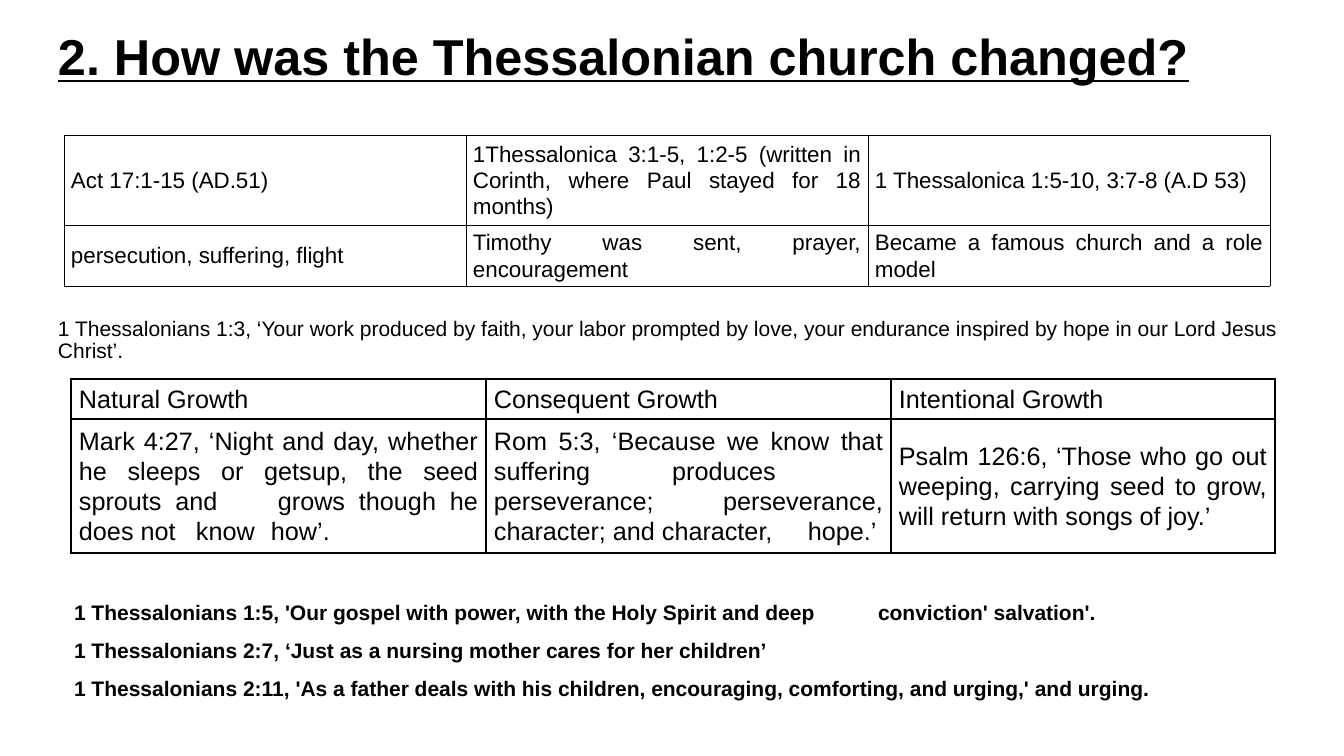
from dataclasses import dataclass

import pptx
import pptx.dml.color
import pptx.enum.text
import pptx.oxml.ns
import pptx.presentation
import pptx.slide
import pptx.util
from lxml import etree

EMU_PER_PX = 914400 / 100.8
BLACK = pptx.dml.color.RGBColor(0x00, 0x00, 0x00)
FONT = "Arial"
JUSTIFY = pptx.enum.text.PP_ALIGN.JUSTIFY
LEFT = pptx.enum.text.PP_ALIGN.LEFT


@dataclass(frozen=True)
class Style:
    size: int
    line_spacing: float
    align: pptx.enum.text.PP_ALIGN = LEFT
    space_after: int = 0
    bold: bool = False
    underline: bool = False


@dataclass(frozen=True)
class TextBox:
    left: int
    top: int
    width: int
    height: int
    style: Style
    lines: tuple[str, ...]
    tabs: tuple[int, ...] = ()


@dataclass(frozen=True)
class Cell:
    text: str
    tabs: tuple[int, ...] = ()


@dataclass(frozen=True)
class Grid:
    left: int
    top: int
    columns: tuple[int, ...]
    rows: tuple[int, ...]
    style: Style
    side_margin: int
    border: float
    cells: tuple[tuple[Cell, ...], ...]


TEXT_BOXES = (
    TextBox(58, 32, 1228, 60, Style(36, 0.9, bold=True, underline=True),
            ("2. How was the Thessalonian church changed?",)),
    TextBox(58, 318, 1228, 46, Style(15, 0.9),
            ("1 Thessalonians 1:3, ‘Your work produced by faith, your labor prompted by love, "
             "your endurance inspired by hope in our Lord Jesus Christ’.",)),
    TextBox(74, 598, 1191, 112, Style(15, 1.07, JUSTIFY, space_after=8, bold=True),
            ("1 Thessalonians 1:5, 'Our gospel with power, with the Holy Spirit and deep"
             "\tconviction' salvation'.",
             "1 Thessalonians 2:7, ‘Just as a nursing mother cares for her children’",
             "1 Thessalonians 2:11, 'As a father deals with his children, encouraging, "
             "comforting, and urging,' and urging."),
            tabs=(804,)),
)

GRIDS = (
    Grid(64, 135, (402, 402, 402), (90, 61), Style(16, 1.06, JUSTIFY), 7, 0.25, (
        (Cell("Act 17:1-15 (AD.51)"),
         Cell("1Thessalonica 3:1-5, 1:2-5 (written in Corinth, where Paul stayed for 18 months)"),
         Cell("1 Thessalonica 1:5-10, 3:7-8 (A.D 53)")),
        (Cell("persecution, suffering, flight"),
         Cell("Timothy was sent, prayer, encouragement"),
         Cell("Became a famous church and a role model")),
    )),
    Grid(71, 379, (415, 405, 384), (40, 134), Style(18, 1.06, JUSTIFY), 8, 1, (
        (Cell("Natural Growth"), Cell("Consequent Growth"), Cell("Intentional Growth")),
        (Cell("Mark 4:27, ‘Night and day, whether he sleeps or gets\tup, the seed "
              "sprouts and\tgrows though he does not\tknow\thow’.", (117, 192, 252)),
         Cell("Rom 5:3, ‘Because we know that suffering produces\tperseverance; "
              "perseverance, character; and character,\thope.’", (314,)),
         Cell("Psalm 126:6, ‘Those who go out weeping, carrying seed to grow, "
              "will return with songs of joy.’")),
    )),
)


def px(n: int) -> pptx.util.Emu:
    return pptx.util.Emu(round(n * EMU_PER_PX))


def add_child(parent: etree._Element, tag: str, **attrs: str) -> etree._Element:
    return etree.SubElement(parent, pptx.oxml.ns.qn(tag), attrs)


def write_text(tf: pptx.text.text.TextFrame, lines: tuple[str, ...], style: Style,
               tabs: tuple[int, ...]) -> None:
    tf.text = "\n".join(lines)
    for p in tf.paragraphs:
        p.alignment = style.align
        p.line_spacing = style.line_spacing
        p.space_before = pptx.util.Pt(0)
        p.space_after = pptx.util.Pt(style.space_after)
        if tabs:
            tab_list = add_child(p._p.get_or_add_pPr(), "a:tabLst")
            for tab in tabs:
                add_child(tab_list, "a:tab", pos=str(px(tab)), algn="l")
        for r in p.runs:
            r.font.name = FONT
            r.font.size = pptx.util.Pt(style.size)
            r.font.bold = style.bold
            r.font.underline = style.underline
            r.font.color.rgb = BLACK


def add_text_box(slide: pptx.slide.Slide, box: TextBox) -> None:
    sp = slide.shapes.add_textbox(px(box.left), px(box.top), px(box.width), px(box.height))
    tf = sp.text_frame
    tf.word_wrap = True
    tf.margin_left = tf.margin_right = tf.margin_top = tf.margin_bottom = 0
    write_text(tf, box.lines, box.style, box.tabs)


def set_borders(cell: pptx.table._Cell, points: float) -> None:
    """Line all four sides; must run before the fill, which follows in the schema."""
    tc_pr = cell._tc.get_or_add_tcPr()
    for side in ("a:lnL", "a:lnR", "a:lnT", "a:lnB"):
        ln = add_child(tc_pr, side, w=str(pptx.util.Pt(points)))
        add_child(add_child(ln, "a:solidFill"), "a:srgbClr", val=str(BLACK))


def add_grid(slide: pptx.slide.Slide, grid: Grid) -> None:
    frame = slide.shapes.add_table(len(grid.rows), len(grid.columns), px(grid.left), px(grid.top),
                                   px(sum(grid.columns)), px(sum(grid.rows)))
    table = frame.table
    table.first_row = table.horz_banding = False
    for column, width in zip(table.columns, grid.columns):
        column.width = px(width)
    for row, height, contents in zip(table.rows, grid.rows, grid.cells):
        row.height = px(height)
        for cell, content in zip(row.cells, contents):
            cell.margin_left = cell.margin_right = px(grid.side_margin)
            cell.margin_top = cell.margin_bottom = px(2)
            cell.vertical_anchor = pptx.enum.text.MSO_ANCHOR.MIDDLE
            set_borders(cell, grid.border)
            cell.fill.background()
            write_text(cell.text_frame, (content.text,), grid.style, content.tabs)


def main() -> None:
    prs = pptx.Presentation()
    prs.slide_width, prs.slide_height = px(1344), px(756)
    slide = prs.slides.add_slide(prs.slide_layouts[6])
    for box in TEXT_BOXES:
        add_text_box(slide, box)
    for grid in GRIDS:
        add_grid(slide, grid)
    prs.save("out.pptx")


if __name__ == "__main__":
    main()
